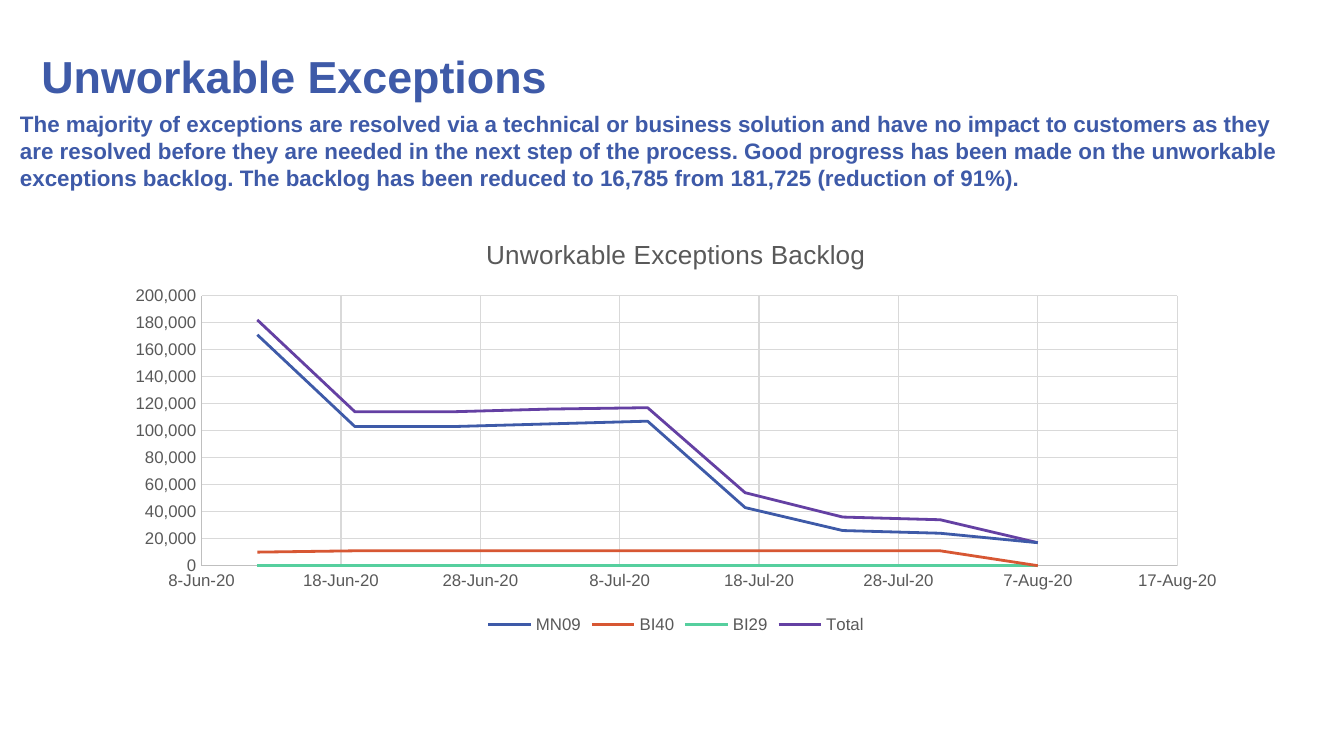
"""Build the Unworkable Exceptions slide with its backlog chart."""
from lxml.etree import SubElement
from pptx import Presentation
from pptx.chart.data import XyChartData
from pptx.dml.color import RGBColor
from pptx.enum.chart import XL_CHART_TYPE as ChartType, XL_LEGEND_POSITION as LegendPosition
from pptx.enum.chart import XL_MARKER_STYLE as MarkerStyle, XL_TICK_MARK as TickMark
from pptx.enum.text import MSO_ANCHOR as Anchor
from pptx.oxml.ns import qn
from pptx.util import Inches, Pt

FONT = "Arial"
COLORS = {
    "blue": "3E5AA8", "orange": "D75733", "green": "56CF9E", "purple": "6440A3",
    "text": "595959", "axis": "BFBFBF", "grid": "D9D9D9",
}
TITLE = "Unworkable Exceptions"
SUMMARY = (
    "The majority of exceptions are resolved via a technical or business solution "
    "and have no impact to customers as they are resolved before they are needed in "
    "the next step of the process. Good progress has been made on the unworkable "
    "exceptions backlog. The backlog has been reduced to 16,785 from 181,725 "
    "(reduction of 91%)."
)
CHART_TITLE = "Unworkable Exceptions Backlog"
FIRST_DAY, LAST_DAY, DAY_STEP = 43990, 44060, 10
FIRST_WEEK = 43994
SERIES = [
    ("MN09", "blue", [171000, 103000, 103000, 105000, 107000, 43000, 26000, 24000, 17000]),
    ("BI40", "orange", [10000, 11000, 11000, 11000, 11000, 11000, 11000, 11000, 0]),
    ("BI29", "green", [0] * 9),
    ("Total", "purple", [182000, 114000, 114000, 116000, 117000, 54000, 36000, 34000, 17000]),
]
CHART_BOX = (0.84, 1.62, 8.38, 3.14)
PLOT_BOX = (1.5, 2.2, 7.26, 2.01)


def style_font(font, size, color, bold=False):
    font.name, font.size, font.bold = FONT, Pt(size), bold
    font.color.rgb = RGBColor.from_string(COLORS[color])


def style_line(line, color, width):
    line.color.rgb = RGBColor.from_string(COLORS[color])
    line.width = Pt(width)


def add_text(slide, text, *, box, size, anchor=Anchor.TOP, space_after=0):
    shape = slide.shapes.add_textbox(*map(Inches, box))
    frame = shape.text_frame
    frame.word_wrap = True
    frame.vertical_anchor = anchor
    paragraph = frame.paragraphs[0]
    paragraph.space_after = Pt(space_after)
    run = paragraph.add_run()
    run.text = text
    style_font(run.font, size, "blue", bold=True)


def style_axis(axis, low, high, step, number_format):
    axis.minimum_scale, axis.maximum_scale, axis.major_unit = low, high, step
    axis.major_tick_mark = axis.minor_tick_mark = TickMark.NONE
    axis.has_major_gridlines = True
    style_line(axis.major_gridlines.format.line, "grid", 0.75)
    style_line(axis.format.line, "axis", 0.75)
    labels = axis.tick_labels
    labels.number_format, labels.number_format_is_linked = number_format, False
    style_font(labels.font, 9, "text")


def place_plot(chart):
    plot_area = chart._chartSpace.chart.plotArea
    layout = plot_area.find(qn("c:layout"))
    if layout is None:
        layout = SubElement(plot_area, qn("c:layout"))
        plot_area.insert(0, layout)
    manual = SubElement(layout, qn("c:manualLayout"))
    left, top, width, height = CHART_BOX
    plot_left, plot_top, plot_width, plot_height = PLOT_BOX
    settings = {
        "layoutTarget": "inner", "xMode": "edge", "yMode": "edge",
        "x": (plot_left - left) / width, "y": (plot_top - top) / height,
        "w": plot_width / width, "h": plot_height / height,
    }
    for name, value in settings.items():
        SubElement(manual, qn(f"c:{name}")).set("val", str(value))


def add_backlog_chart(slide):
    data = XyChartData(number_format="#,##0")
    for name, _, values in SERIES:
        series = data.add_series(name)
        for week, value in enumerate(values):
            series.add_data_point(FIRST_WEEK + 7 * week, value)
    box = map(Inches, CHART_BOX)
    chart = slide.shapes.add_chart(ChartType.XY_SCATTER_LINES_NO_MARKERS, *box, data).chart
    chart.font.name, chart.font.size = FONT, Pt(10)
    chart.plots[0].vary_by_categories = False
    for series, (_, color, _) in zip(chart.plots[0].series, SERIES):
        series.smooth = False
        series.marker.style = MarkerStyle.NONE
        style_line(series.format.line, color, 1.5)
    chart.has_title = True
    run = chart.chart_title.text_frame.paragraphs[0].add_run()
    run.text = CHART_TITLE
    style_font(run.font, 14, "text")
    chart.has_legend = True
    chart.legend.position = LegendPosition.BOTTOM
    chart.legend.include_in_layout = False
    style_font(chart.legend.font, 9, "text")
    style_axis(chart.category_axis, FIRST_DAY, LAST_DAY, DAY_STEP, "d-mmm-yy")
    style_axis(chart.value_axis, 0, 200000, 20000, "#,##0")
    place_plot(chart)


def main():
    presentation = Presentation()
    presentation.slide_width = Inches(10)
    presentation.slide_height = Inches(10) * 9 // 16
    slide = presentation.slides.add_slide(presentation.slide_layouts[6])
    add_text(slide, TITLE, box=(0.21, 0.21, 9.3, 0.7), size=24, anchor=Anchor.MIDDLE)
    add_text(slide, SUMMARY, box=(0.05, 0.77, 9.79, 0.79), size=12, space_after=3)
    add_backlog_chart(slide)
    presentation.save("out.pptx")


if __name__ == "__main__":
    main()
